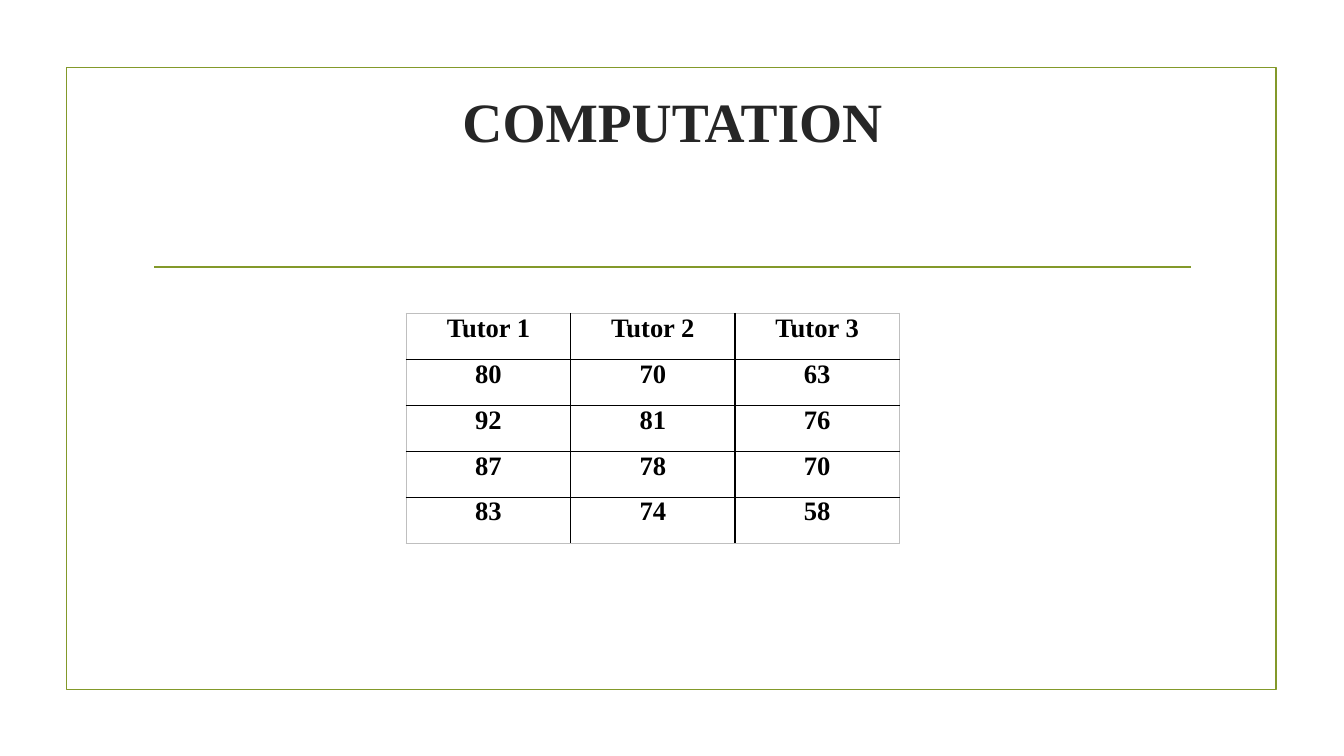
from dataclasses import dataclass

from lxml.etree import SubElement
from pptx import Presentation
from pptx.dml.color import RGBColor
from pptx.enum.shapes import MSO_CONNECTOR, MSO_SHAPE
from pptx.enum.text import MSO_ANCHOR, PP_ALIGN
from pptx.oxml.ns import qn
from pptx.util import Inches, Pt


@dataclass(frozen=True)
class Theme:
    font: str = "Times New Roman"
    accent: str = "83992A"
    title_color: str = "262626"
    table_color: str = "000000"
    table_edge: str = "BFBFBF"
    title_size: float = 39.6
    table_size: float = 19
    rule_width: float = 1.25
    border_width: float = 1


class SlideBuilder:
    def __init__(self, page, theme):
        self.page = page
        self.theme = theme

    def style_line(self, line):
        line.color.rgb = RGBColor.from_string(self.theme.accent)
        line.width = Pt(self.theme.rule_width)

    def style_text(self, frame, text, size, color):
        para = frame.paragraphs[0]
        para.text = text
        para.alignment = PP_ALIGN.CENTER
        para.font.name = self.theme.font
        para.font.size = Pt(size)
        para.font.bold = True
        para.font.color.rgb = RGBColor.from_string(color)

    def frame(self, left, top, width, height):
        shape = self.page.shapes.add_shape(
            MSO_SHAPE.RECTANGLE, Inches(left), Inches(top), Inches(width), Inches(height)
        )
        shape.shadow.inherit = False
        shape.fill.background()
        self.style_line(shape.line)

    def rule(self, left, right, y):
        rule = self.page.shapes.add_connector(
            MSO_CONNECTOR.STRAIGHT, Inches(left), Inches(y), Inches(right), Inches(y)
        )
        self.style_line(rule.line)
        SubElement(rule._element.spPr, qn("a:effectLst"))

    def title(self, text, left, top, width, height):
        box = self.page.shapes.add_textbox(
            Inches(left), Inches(top), Inches(width), Inches(height)
        )
        frame = box.text_frame
        frame.word_wrap = True
        frame.margin_top = frame.margin_bottom = 0
        self.style_text(frame, text, self.theme.title_size, self.theme.title_color)

    def border(self, cell, side, color):
        properties = cell._tc.get_or_add_tcPr()
        line = SubElement(
            properties, qn(f"a:ln{side}"), w=str(Pt(self.theme.border_width))
        )
        fill = SubElement(line, qn("a:solidFill"))
        SubElement(fill, qn("a:srgbClr"), val=color)

    def table(self, rows, left, top, column_width, row_height):
        last_row, last_column = len(rows) - 1, len(rows[0]) - 1
        table = self.page.shapes.add_table(
            len(rows), len(rows[0]), Inches(left), Inches(top),
            Inches(column_width * len(rows[0])), Inches(row_height * len(rows)),
        ).table
        table.first_row = table.horz_banding = False
        for row in table.rows:
            row.height = Inches(row_height)
        for column in table.columns:
            column.width = Inches(column_width)
        for r, values in enumerate(rows):
            for c, value in enumerate(values):
                cell = table.cell(r, c)
                cell.margin_left = cell.margin_right = Inches(0.06)
                cell.margin_top = cell.margin_bottom = 0
                cell.vertical_anchor = MSO_ANCHOR.TOP
                self.style_text(
                    cell.text_frame, value, self.theme.table_size, self.theme.table_color
                )
                outer = {"L": c == 0, "R": c == last_column, "T": r == 0, "B": r == last_row}
                for side, is_edge in outer.items():
                    color = self.theme.table_edge if is_edge else self.theme.table_color
                    self.border(cell, side, color)
                cell.fill.background()


def main():
    deck = Presentation()
    deck.slide_width = Inches(13.33)
    deck.slide_height = Inches(7.5)
    page = deck.slides.add_slide(deck.slide_layouts[6])
    builder = SlideBuilder(page, Theme())
    builder.frame(0.66, 0.67, 12, 6.17)
    builder.rule(1.53, 11.81, 2.65)
    builder.title("COMPUTATION", 1.42, 0.86, 10.5, 0.64)
    scores = [
        ("Tutor 1", "Tutor 2", "Tutor 3"),
        ("80", "70", "63"),
        ("92", "81", "76"),
        ("87", "78", "70"),
        ("83", "74", "58"),
    ]
    builder.table(scores, 4.03, 3.11, 1.63, 0.456)
    deck.save("out.pptx")


if __name__ == "__main__":
    main()
